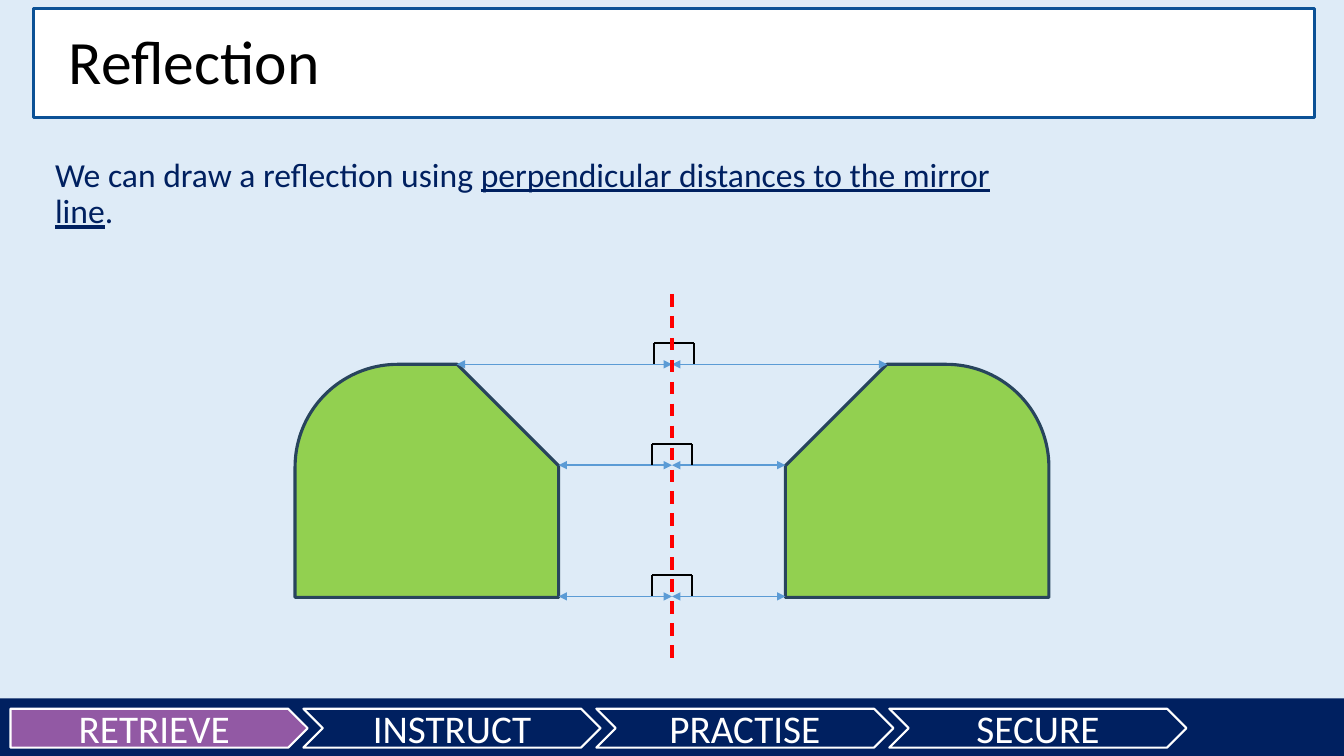
from dataclasses import dataclass

from pptx import Presentation
from pptx.dml.color import RGBColor
from pptx.enum.dml import MSO_LINE
from pptx.enum.shapes import MSO_CONNECTOR, MSO_SHAPE
from pptx.enum.text import MSO_ANCHOR, MSO_AUTO_SIZE, PP_ALIGN
from pptx.oxml.ns import qn
from pptx.util import Emu, Pt
from lxml.etree import SubElement


@dataclass(frozen=True)
class Theme:
    font: str = "Calibri"
    background: str = "DEEBF7"
    navy: str = "002060"
    white: str = "FFFFFF"
    black: str = "000000"
    banner_line: str = "0B5196"
    current_stage: str = "9259A4"
    figure: str = "92D050"
    figure_line: str = "28445D"
    distance: str = "5B9BD5"
    mirror: str = "FF0000"
    title_size: int = 44
    body_size: int = 24
    stage_size: int = 28


THEME = Theme()
STAGES = ["RETRIEVE", "INSTRUCT", "PRACTISE", "SECURE"]


def px(n):
    return Emu(round(n * 9525))


def rgb(value):
    return RGBColor.from_string(value)


def add_shape(s, kind, box, fill, line=None, width=2.25):
    sp = s.shapes.add_shape(kind, *map(px, box))
    sp.shadow.inherit = False
    sp.fill.solid()
    sp.fill.fore_color.rgb = rgb(fill)
    if line:
        sp.line.color.rgb = rgb(line)
        sp.line.width = Pt(width)
    else:
        sp.line.fill.background()
    return sp


def add_line(s, start, end, color, width, arrows=False):
    line = s.shapes.add_connector(MSO_CONNECTOR.STRAIGHT, *map(px, (*start, *end)))
    line.line.color.rgb = rgb(color)
    line.line.width = Pt(width)
    if arrows:
        ln = line.line._get_or_add_ln()
        for tag in ("a:headEnd", "a:tailEnd"):
            SubElement(ln, qn(tag), type="triangle")
    SubElement(line.element.spPr, qn("a:effectLst"))
    return line


def add_run(p, text, size, color, underline=None):
    r = p.add_run()
    r.text = text
    r.font.name = THEME.font
    r.font.size = Pt(size)
    r.font.color.rgb = rgb(color)
    r.font.underline = underline


def add_title(s, box, text):
    x, y, w, h = box
    add_shape(s, MSO_SHAPE.RECTANGLE, box, THEME.white, THEME.banner_line)
    title = s.shapes.title
    title.left, title.top = px(x + 24), px(y + 18)
    title.width, title.height = px(w - 24), px(h - 33)
    title.element.getparent().append(title.element)  # in front of the banner
    tf = title.text_frame
    tf.auto_size = MSO_AUTO_SIZE.NONE
    tf.vertical_anchor = MSO_ANCHOR.MIDDLE
    p = tf.paragraphs[0]
    p.alignment = PP_ALIGN.LEFT
    p.line_spacing = 0.9
    add_run(p, text, THEME.title_size, THEME.black)


def add_statement(s, box):
    tf = s.shapes.add_textbox(*map(px, box)).text_frame
    tf.word_wrap = True
    p = tf.paragraphs[0]
    p.line_spacing = 0.9
    for text, underline in [
        ("We can draw a reflection using ", None),
        ("perpendicular distances to the mirror line", True),
        (".", None),
    ]:
        add_run(p, text, THEME.body_size, THEME.navy, underline)


def add_stage_bar(s, box):
    x, y, w, h = box
    add_shape(s, MSO_SHAPE.RECTANGLE, box, THEME.navy)
    for i, stage in enumerate(STAGES):
        kind, fill = MSO_SHAPE.CHEVRON, THEME.navy
        if i == 0:
            kind, fill = MSO_SHAPE.PENTAGON, THEME.current_stage
        sp = add_shape(s, kind, (x + 10 + 279 * i, y + 10, 283, 37),
                       fill, THEME.white, 1.5)
        tf = sp.text_frame
        tf.vertical_anchor = MSO_ANCHOR.MIDDLE
        p = tf.paragraphs[0]
        p.alignment = PP_ALIGN.CENTER
        add_run(p, stage, THEME.stage_size, THEME.white)


def add_reflection(s, box):
    """Draw two mirrored figures and the distances from their corners to the mirror."""
    x, y, w, h = box
    mirror = x + w // 2
    top, figure_w, figure_h, near, mark = y + 67, 251, 222, 108, 20

    for side, left in ((-1, mirror - near - figure_w), (1, mirror + near)):
        sp = add_shape(s, MSO_SHAPE.SNIP_ROUND_RECTANGLE,
                       (left, top, figure_w, figure_h),
                       THEME.figure, THEME.figure_line)
        sp.adjustments[0], sp.adjustments[1] = 0.441, 0.435
        if side > 0:
            sp.element.spPr.find(qn("a:xfrm")).set("flipH", "1")

    # corner depth, distance to the mirror, shift of the right-angle mark
    for depth, distance, shift in ((0, 205, 2), (96, near, 0), (221, near, 0)):
        row, centre = top + depth, mirror + shift
        for side in (-1, 1):
            ends = sorted((mirror, mirror + side * distance))
            add_line(s, (ends[0], row), (ends[1], row), THEME.distance, 1, arrows=True)
            edge = centre + side * 19
            add_line(s, (centre, row - mark), (edge, row - mark), THEME.black, 1.5)
            add_line(s, (edge, row - mark), (edge, row), THEME.black, 1.5)

    axis = add_line(s, (mirror, y), (mirror, y + h), THEME.mirror, 2.25)
    axis.line.dash_style = MSO_LINE.DASH


def main():
    prs = Presentation()
    prs.slide_width, prs.slide_height = px(1280), px(720)
    s = prs.slides.add_slide(prs.slide_layouts[5])
    s.background.fill.solid()
    s.background.fill.fore_color.rgb = rgb(THEME.background)
    add_title(s, (32, 8, 1220, 104), "Reflection")
    add_stage_bar(s, (0, 665, 1280, 55))
    add_statement(s, (43, 146, 955, 51))
    add_reflection(s, (281, 280, 718, 354))
    prs.save("out.pptx")


if __name__ == "__main__":
    main()
